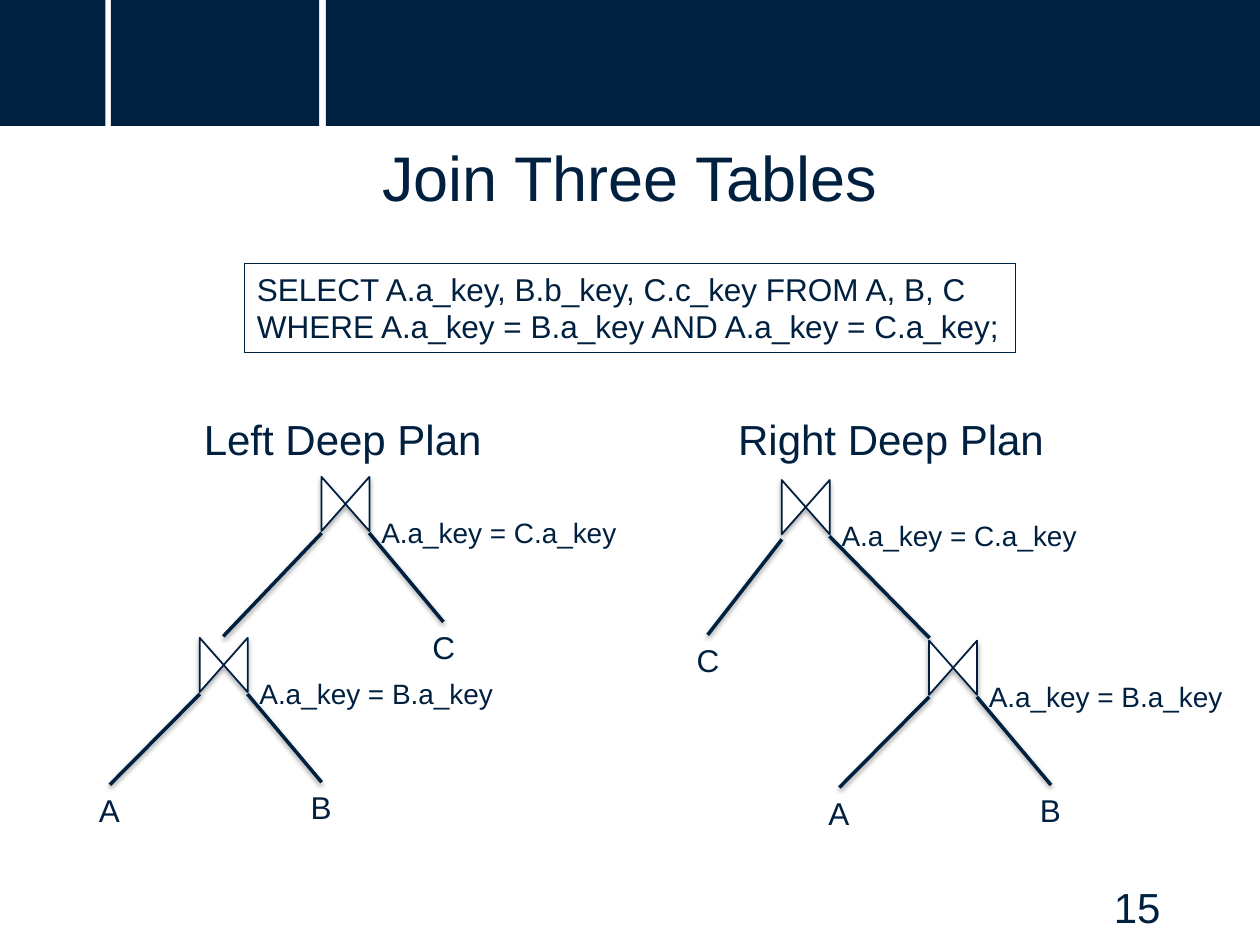
from lxml.etree import SubElement
from pptx import Presentation
from pptx.dml.color import RGBColor
from pptx.enum.shapes import MSO_CONNECTOR as Conn, MSO_SHAPE as Shape
from pptx.enum.text import MSO_ANCHOR as Anchor, MSO_AUTO_SIZE as Auto, PP_ALIGN as Align
from pptx.oxml.ns import qn
from pptx.util import Pt

NAVY, OUTLINE, WHITE, BLACK = "002040", "001F3F", "FFFFFF", "000000"


def color(value):
    return RGBColor.from_string(value)


def add_shadow(shape, alpha, distance):
    effects = SubElement(shape._element.spPr, qn("a:effectLst"))
    shadow = SubElement(effects, qn("a:outerShdw"), blurRad=str(Pt(3.1)),
                        dist=str(Pt(distance)), dir="5400000", rotWithShape="0")
    tint = SubElement(shadow, qn("a:srgbClr"), val=BLACK)
    SubElement(tint, qn("a:alpha"), val=str(alpha * 1000))


class Slide:
    font = "Arial"

    def __init__(self, prs):
        self.s = prs.slides.add_slide(prs.slide_layouts[5])

    def fill_text(self, tf, lines, size, align=Align.LEFT):
        tf.text = "\n".join(lines)
        tf.vertical_anchor = Anchor.TOP
        for p in tf.paragraphs:
            p.alignment = align
            p.font.name, p.font.size = self.font, Pt(size)
            p.font.color.rgb = color(NAVY)

    def title(self, text, x, y, w, h):
        sp = self.s.shapes.title
        sp.left, sp.top, sp.width, sp.height = Pt(x), Pt(y), Pt(w), Pt(h)
        self.fill_text(sp.text_frame, [text], 36, Align.CENTER)

    def bar(self, x, w):
        sp = self.s.shapes.add_shape(Shape.RECTANGLE, Pt(x), 0, Pt(w), Pt(72))
        sp.shadow.inherit = False
        sp.fill.solid()
        sp.fill.fore_color.rgb = color(NAVY)
        sp.line.fill.background()

    def text(self, text, x, y, w, h, size, align=Align.LEFT, wrap=False):
        sp = self.s.shapes.add_textbox(Pt(x), Pt(y), Pt(w), Pt(h))
        tf = sp.text_frame
        tf.word_wrap = wrap
        tf.auto_size = Auto.NONE if wrap else Auto.SHAPE_TO_FIT_TEXT
        self.fill_text(tf, [text], size, align)
        return sp

    def query(self, lines, x, y, w, h):
        sp = self.s.shapes.add_shape(Shape.RECTANGLE, Pt(x), Pt(y), Pt(w), Pt(h))
        sp.shadow.inherit = False
        sp.fill.background()
        sp.line.color.rgb, sp.line.width = color(NAVY), Pt(0.75)
        sp.text_frame.word_wrap = True
        self.fill_text(sp.text_frame, lines, 18)

    def edge(self, x1, y1, x2, y2, leaf=None):
        line = self.s.shapes.add_connector(Conn.STRAIGHT, Pt(x1), Pt(y1), Pt(x2), Pt(y2))
        line.line.color.rgb, line.line.width = color(NAVY), Pt(2)
        if leaf is not None:
            line.begin_connect(leaf, 0)
        add_shadow(line, 38, 1.6)

    def join(self, cx, cy, condition):
        w, h = 31, 27.4
        sp = self.s.shapes.add_shape(Shape.FLOWCHART_COLLATE, Pt(cx - w / 2),
                                     Pt(cy - h / 2), Pt(w), Pt(h))
        sp.rotation = 90
        sp.fill.solid()
        sp.fill.fore_color.rgb = color(WHITE)
        sp.line.color.rgb, sp.line.width = color(OUTLINE), Pt(1)
        add_shadow(sp, 35, 1.8)
        self.text(condition, cx + 13.4, cy + 3, 150, 26.6, 16)

    def leaf(self, name, cx, cy, dx, dy, drop=16.6):
        x, y = cx + dx, cy + dy
        box = self.text(name, x - 13.4, y, 26.8, 29, 18)
        side = 13.6 if dx > 0 else -13.6
        self.edge(x, y, cx + side, cy + drop, box)

    def leaf_join(self, cx, cy):
        self.join(cx, cy, "A.a_key = B.a_key")
        self.leaf("A", cx, cy, -65, 68.4)
        self.leaf("B", cx, cy, 56, 67)

    def root_join(self, cx, cy, c_leaf, child):
        self.join(cx, cy, "A.a_key = C.a_key")
        self.leaf("C", cx, cy, *c_leaf)
        side = 13.6 if child[0] > cx else -13.6
        self.edge(*child, cx + side, cy + 16.6)


def main():
    prs = Presentation()
    prs.slide_width, prs.slide_height = Pt(720), Pt(540)
    slide = Slide(prs)

    for x, w in ((0, 60.2), (63.4, 119), (186.2, 533.8)):
        slide.bar(x, w)
    slide.title("Join Three Tables", 49.7, 75.6, 620.6, 69.8)
    slide.text("15", 508.3, 500.4, 162, 28.8, 24, Align.RIGHT, True)
    slide.query(["SELECT A.a_key, B.b_key, C.c_key FROM A, B, C",
                 "WHERE A.a_key = B.a_key AND A.a_key = C.a_key;"],
                139.7, 150.5, 440.6, 51)

    slide.leaf_join(127.8, 380)
    slide.root_join(197.4, 288, (56, 67.4), (127.6, 363.6))
    slide.leaf_join(544.6, 381.6)
    slide.root_join(460.4, 289.8, (-56, 73, 18.4), (531.2, 364.6))

    slide.text("Left Deep Plan", 109.4, 232.8, 175, 36, 24)
    slide.text("Right Deep Plan", 414.7, 232.8, 191.5, 36, 24)
    prs.save("out.pptx")


if __name__ == "__main__":
    main()
